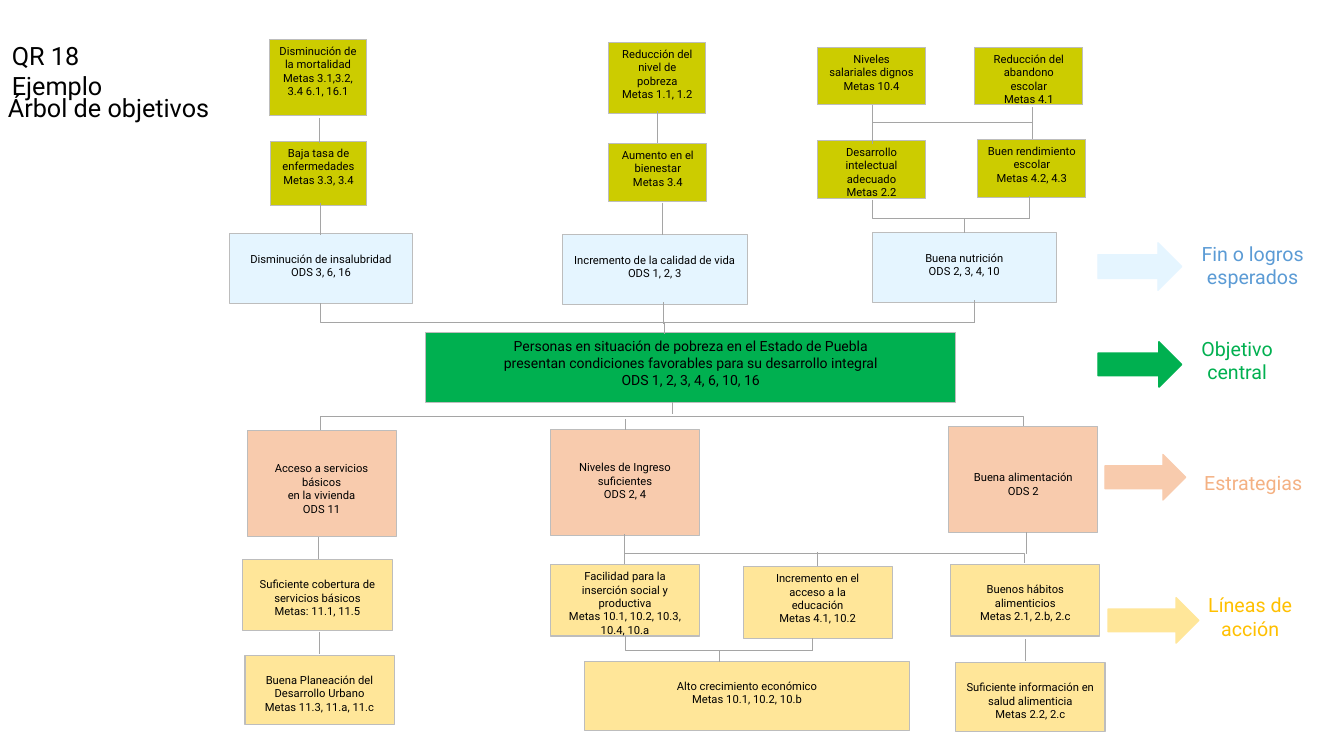
from pptx import Presentation
from pptx.dml.color import RGBColor
from pptx.enum.shapes import MSO_CONNECTOR, MSO_SHAPE
from pptx.enum.text import MSO_ANCHOR, PP_ALIGN
from pptx.oxml.ns import qn
from pptx.oxml.xmlchemy import OxmlElement
from pptx.util import Inches, Pt

RECT, ARROW = MSO_SHAPE.RECTANGLE, MSO_SHAPE.RIGHT_ARROW
STRAIGHT, ELBOW = MSO_CONNECTOR.STRAIGHT, MSO_CONNECTOR.ELBOW
TOP, MIDDLE = MSO_ANCHOR.TOP, MSO_ANCHOR.MIDDLE
LEFT, CENTER = PP_ALIGN.LEFT, PP_ALIGN.CENTER
FONT = "Roboto"
LINE_HEIGHT = 0.13
OLIVE, SKY, GREEN = "CCCC00", "E5F5FF", "00B050"
PEACH, CREAM = "F8CBAD", "FFE699"
BLACK, WHITE, BORDER, GRAY = "000000", "FFFFFF", "BDBDBD", "A5A5A5"

# fill, text size, boxes as (left, top, width, height, lines of top inset, text)
LEVELS = [
    (OLIVE, 8, [
        (2.67, 0.39, 0.97, 0.76, 0, "Disminución de la mortalidad\nMetas 3.1,3.2, 3.4 6.1, 16.1"),
        (6.04, 0.42, 0.96, 0.71, 0, "Reducción del nivel de pobreza\nMetas 1.1, 1.2"),
        (2.68, 1.4, 0.96, 0.64, 0, "Baja tasa de enfermedades\nMetas 3.3, 3.4"),
        (6.04, 1.42, 0.97, 0.58, 0, "Aumento en el bienestar\nMetas 3.4"),
        (8.11, 0.47, 1.07, 0.57, 0, "Niveles\nsalariales dignos\nMetas 10.4"),
        (9.67, 0.47, 1.07, 0.57, 0, "Reducción del\nabandono escolar\nMetas 4.1"),
        (8.11, 1.39, 1.07, 0.58, 0, "Desarrollo\nintelectual\nadecuado\nMetas 2.2"),
        (9.7, 1.38, 1.07, 0.58, 0, "Buen rendimiento\nescolar\nMetas 4.2, 4.3"),
    ]),
    (SKY, 8, [
        (2.28, 2.32, 1.81, 0.69, 1, "Disminución de insalubridad\nODS 3, 6, 16"),
        (5.58, 2.33, 1.83, 0.69, 1, "Incremento de la calidad de vida\nODS 1, 2, 3"),
        (8.65, 2.31, 1.83, 0.69, 1, "Buena nutrición\nODS 2, 3, 4, 10"),
    ]),
    (GREEN, 10, [
        (4.22, 3.3, 5.26, 0.69, 0,
         "Personas en situación de pobreza en el Estado de Puebla\n"
         "presentan condiciones favorables para su desarrollo integral\n"
         "ODS 1, 2, 3, 4, 6, 10, 16"),
    ]),
    (PEACH, 8, [
        (2.45, 4.27, 1.48, 1.05, 2, "Acceso a servicios básicos\nen la vivienda\nODS 11"),
        (5.46, 4.26, 1.48, 1.05, 2, "Niveles de Ingreso\nsuficientes\nODS 2, 4"),
        (9.41, 4.23, 1.48, 1.05, 3, "Buena alimentación\nODS 2"),
    ]),
    (CREAM, 8, [
        (2.41, 5.55, 1.48, 0.71, 1, "Suficiente cobertura de servicios básicos\nMetas: 11.1, 11.5"),
        (2.43, 6.5, 1.48, 0.69, 1, "Buena Planeación del Desarrollo Urbano\nMetas 11.3, 11.a, 11.c"),
        (5.46, 5.6, 1.48, 0.71, 0,
         "Facilidad para la inserción social y productiva\nMetas 10.1, 10.2, 10.3, 10.4, 10.a"),
        (7.37, 5.62, 1.48, 0.71, 0, "Incremento en el\nacceso a la\neducación\nMetas 4.1, 10.2"),
        (5.8, 6.56, 3.22, 0.69, 1, "Alto crecimiento económico\nMetas 10.1, 10.2, 10.b"),
        (9.43, 5.6, 1.48, 0.71, 1, "Buenos hábitos alimenticios\nMetas 2.1, 2.b, 2.c"),
        (9.48, 6.57, 1.48, 0.69, 1, "Suficiente información en salud alimenticia\nMetas 2.2, 2.c"),
    ]),
]

# vertical links as (x, top, bottom)
LINKS = [
    (6.67, 3.99, 4.11), (6.2, 4.16, 4.27), (3.16, 5.33, 5.55), (3.17, 6.27, 6.49),
    (6.19, 5.3, 5.52), (10.18, 5.28, 5.5), (10.17, 6.34, 6.56), (8.11, 5.48, 5.62),
    (8.06, 6.33, 6.45), (7.13, 6.45, 6.57), (9.66, 2.98, 3.2), (3.18, 2.01, 2.33),
    (3.17, 1.17, 1.42), (6.57, 2.01, 2.33), (6.52, 1.1, 1.42), (8.65, 1.21, 1.43),
    (10.24, 1.06, 1.28), (6.58, 3, 3.21), (9.56, 2.17, 2.31), (10.21, 1.94, 2.16),
    (6.59, 3.19, 3.31),
]

# elbows as (x1, y1, x2, y2, height of the crossbar)
ELBOWS = [
    (3.18, 4.27, 10.15, 4.23, 4.13),
    (6.19, 5.6, 10.16, 5.59, 5.49),
    (6.2, 6.31, 8.06, 6.45, 6.45),
    (3.18, 3.01, 9.67, 3.2, 3.2),
    (8.65, 1.04, 10.24, 1.38, 1.21),
    (8.65, 1.98, 10.22, 2.17, 2.17),
]

# text, text colour, label place, arrow fill, arrow place
LEGEND = [
    ("Objetivo central", GREEN, (11.53, 3.25, 1.48, 0.65), GREEN, (10.89, 3.39, 0.83, 0.45)),
    ("Estrategias", "F4B183", (11.69, 4.46, 1.48, 0.65), PEACH, (10.96, 4.51, 0.8, 0.45)),
    ("Líneas de acción", "FFC000", (11.66, 5.79, 1.48, 0.65), CREAM, (10.99, 5.93, 0.9, 0.45)),
    ("Fin o logros esperados", "5B9BD5", (11.51, 2.21, 1.83, 0.84), SKY, (10.89, 2.41, 0.83, 0.47)),
]

TITLES = [
    ("Árbol de objetivos", (-0.02, 0.87, 2.26, 0.4)),
    ("QR 18 Ejemplo", (0.02, 0.35, 1.8, 0.4)),
]


def rgb(value):
    """Return the colour for a hex string."""
    return RGBColor.from_string(value)


def write(sp, text, size, color=BLACK, align=CENTER, anchor=TOP, inset=0):
    """Write one paragraph per line of text, lowered by a number of lines."""
    tf = sp.text_frame
    frame = {"word_wrap": True, "vertical_anchor": anchor,
             "margin_top": Inches(0.05 + inset * LINE_HEIGHT)}
    for name, value in frame.items():
        setattr(tf, name, value)
    for i, line in enumerate(text.split("\n")):
        p = tf.add_paragraph() if i else tf.paragraphs[0]
        p.alignment = align
        r = p.add_run()
        r.text = line
        for name, value in {"size": Pt(size), "name": FONT}.items():
            setattr(r.font, name, value)
        r.font.color.rgb = rgb(color)


def add_block(s, kind, place, fill, line=None, width=0.75):
    """Add a filled preset shape with an optional outline."""
    sp = s.shapes.add_shape(kind, *map(Inches, place))
    sp.shadow.inherit = False
    sp.fill.solid()
    sp.fill.fore_color.rgb = rgb(fill)
    if line:
        sp.line.color.rgb = rgb(line)
        sp.line.width = Pt(width)
    else:
        sp.line.fill.background()
    return sp


def add_link(s, kind, *ends):
    """Add a thin grey connector without shadow."""
    link = s.shapes.add_connector(kind, *map(Inches, ends))
    link.line.color.rgb = rgb(GRAY)
    link.line.width = Pt(0.5)
    link._element.spPr.append(OxmlElement("a:effectLst"))
    return link


def add_elbow(s, x1, y1, x2, y2, bar):
    """Add an elbow that leaves vertically and crosses at height bar."""
    cx, cy = (x1 + x2) / 2, (y1 + y2) / 2
    dx, dy = (x2 - x1) / 2, abs(y2 - y1) / 2
    spPr = add_link(s, ELBOW, cx - dy, cy - dx, cx + dy, cy + dx)._element.spPr
    xfrm, geom = spPr.find(qn("a:xfrm")), spPr.find(qn("a:prstGeom"))
    turn = {"rot": "16200000", "flipH": "1"}
    if y2 < y1:
        turn = {"rot": "5400000", "flipH": "1", "flipV": "1"}
    for name, value in turn.items():
        xfrm.set(name, value)
    if bar == y2:
        geom.set("prst", "bentConnector2")
        return
    gd = OxmlElement("a:gd")
    gd.set("name", "adj1")
    gd.set("fmla", f"val {round((bar - y1) / (y2 - y1) * 100000)}")
    geom.get_or_add_avLst().append(gd) if hasattr(geom, "get_or_add_avLst") else geom[0].append(gd)


def main():
    """Build the objective tree slide."""
    prs = Presentation()
    prs.slide_width, prs.slide_height = Inches(13.33), Inches(7.5)
    s = prs.slides.add_slide(prs.slide_layouts[6])
    for fill, size, boxes in LEVELS:
        for *place, inset, text in boxes:
            write(add_block(s, RECT, place, fill, BORDER), text, size, inset=inset)
    for x, top, bottom in LINKS:
        add_link(s, STRAIGHT, x, top, x, bottom)
    for elbow in ELBOWS:
        add_elbow(s, *elbow)
    for text, place in TITLES:
        write(s.shapes.add_textbox(*map(Inches, place)), text, 18, align=LEFT)
    for text, color, place, fill, arrow in LEGEND:
        write(add_block(s, RECT, place, WHITE), text, 14, color, anchor=MIDDLE)
        add_block(s, ARROW, arrow, fill, fill, 1)
    prs.save("out.pptx")


if __name__ == "__main__":
    main()
